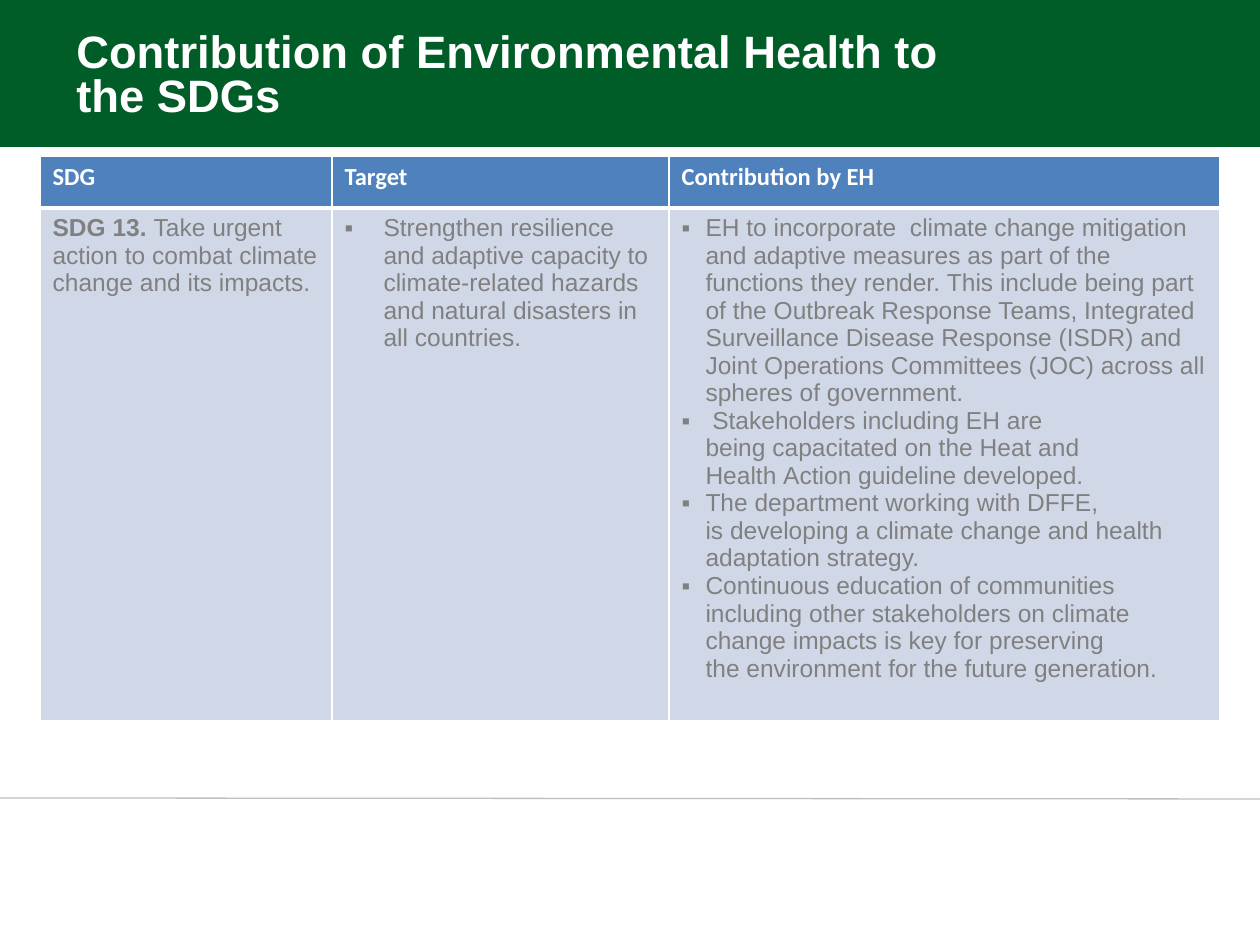
from pptx import Presentation
from pptx.dml.color import RGBColor
from pptx.enum.shapes import MSO_CONNECTOR as Connector, MSO_SHAPE as Shape
from pptx.enum.text import MSO_ANCHOR as Anchor
from pptx.oxml.ns import qn
from pptx.util import Emu, Pt
from lxml.etree import SubElement

EMU_PER_PX = 914400 / 126
WHITE, GREEN, BLUE, PALE, GREY, SILVER = (
    "FFFFFF", "005D28", "4F81BD", "D0D8E8", "808080", "BFBFBF")


def px(length):
    return Emu(round(length * EMU_PER_PX))


def rgb(color):
    return RGBColor.from_string(color)


def nbsp(text):
    """Turn each ~ into a no-break space."""
    return text.replace("~", chr(160))


class SlideBuilder:
    def __init__(self, slide):
        self.slide = slide

    def style(self, font, size, color, bold=False, name="Arial"):
        font.name, font.size, font.bold = name, Pt(size), bold
        font.color.rgb = rgb(color)

    def band(self, left, top, width, height, color):
        band = self.slide.shapes.add_shape(
            Shape.RECTANGLE, px(left), px(top), px(width), px(height))
        band.shadow.inherit = False
        band.fill.solid()
        band.fill.fore_color.rgb = rgb(color)
        band.line.fill.background()

    def rule(self, x1, y1, x2, y2, color):
        rule = self.slide.shapes.add_connector(
            Connector.STRAIGHT, px(x1), px(y1), px(x2), px(y2))
        rule.line.color.rgb = rgb(color)
        rule.line.width = Pt(0.75)
        SubElement(rule._element.spPr, qn("a:effectLst"))

    def title(self, left, top, width, height, text):
        frame = self.slide.shapes.add_textbox(
            px(left), px(top), px(width), px(height)).text_frame
        frame.word_wrap = True
        frame.vertical_anchor = Anchor.BOTTOM
        frame.text = text
        heading = frame.paragraphs[0]
        heading.line_spacing = 0.8
        self.style(heading.runs[0].font, 25.9, WHITE, bold=True)

    def table(self, left, top, columns, rows):
        table = self.slide.shapes.add_table(
            len(rows), len(columns), px(left), px(top),
            px(sum(columns)), px(sum(rows))).table
        for column, width in zip(table.columns, columns):
            column.width = px(width)
        for row, height in zip(table.rows, rows):
            row.height = px(height)
        return table

    def cell(self, cell, fill, top=1, bottom=1):
        tc_pr = cell._tc.get_or_add_tcPr()
        for side, width in zip("LRTB", (1, 1, top, bottom)):
            border = SubElement(tc_pr, qn(f"a:ln{side}"), w=str(Pt(width)))
            solid = SubElement(border, qn("a:solidFill"))
            SubElement(solid, qn("a:srgbClr"), val=WHITE)
        cell.fill.solid()
        cell.fill.fore_color.rgb = rgb(fill)

    def header(self, cell, text):
        self.cell(cell, BLUE, bottom=3)
        cell.text_frame.text = text
        self.style(cell.text_frame.paragraphs[0].runs[0].font, 14, WHITE,
                   bold=True, name="Calibri")

    def goal(self, cell, number, text):
        self.cell(cell, PALE, top=3)
        paragraph = cell.text_frame.paragraphs[0]
        for part, bold in ((number, True), (text, False)):
            run = paragraph.add_run()
            run.text = part
            self.style(run.font, 14, GREY, bold)

    def bullets(self, cell, items, indent):
        self.cell(cell, PALE, top=3)
        cell.text_frame.text = "\n".join(nbsp(item) for item in items)
        for paragraph in cell.text_frame.paragraphs:
            p_pr = paragraph._p.get_or_add_pPr()
            p_pr.set("marL", str(px(indent)))
            p_pr.set("indent", str(-px(indent)))
            SubElement(p_pr, qn("a:buFont"), typeface="Arial")
            SubElement(p_pr, qn("a:buChar"), char="▪")
            self.style(paragraph.runs[0].font, 14, GREY)


HEADERS = ["SDG", "Target", "Contribution by EH"]
TARGETS = [
    "Strengthen resilience and adaptive capacity to climate-related hazards "
    "and natural disasters in all countries.",
]
CONTRIBUTIONS = [
    "EH to incorporate~~climate change~mitigation and adaptive measures "
    "as~part of the functions they render.~This include being part of "
    "the~Outbreak Response Teams,~Integrated Surveillance Disease~Response "
    "(ISDR) and Joint~Operations Committees (JOC) across~all spheres of "
    "government.~",
    "~Stakeholders including EH are being~capacitated on the Heat and "
    "Health~Action guideline developed.",
    "The~department working with DFFE, is~developing a climate change "
    "and~health adaptation strategy.~",
    "Continuous education of~communities including other~stakeholders on "
    "climate change~impacts is key for preserving the~environment for the "
    "future~generation.~~",
]


def main():
    prs = Presentation()
    prs.slide_width, prs.slide_height = px(1260), px(945)
    page = SlideBuilder(prs.slides.add_slide(prs.slide_layouts[6]))

    # Title band and footer rule
    page.band(0, 0, 1260, 147, GREEN)
    page.rule(0, 798, 1260, 799, SILVER)
    page.title(64, 16, 922, 111,
               "Contribution of Environmental Health to the SDGs")

    # Goal, target and contribution table
    table = page.table(40, 156, columns=[292, 337, 551], rows=[52, 479])
    for column, text in enumerate(HEADERS):
        page.header(table.cell(0, column), text)
    page.goal(table.cell(1, 0), "SDG 13. ",
              "Take urgent action to combat climate change and its impacts.")
    page.bullets(table.cell(1, 1), TARGETS, indent=39)
    page.bullets(table.cell(1, 2), CONTRIBUTIONS, indent=24)

    prs.save("out.pptx")


if __name__ == "__main__":
    main()
